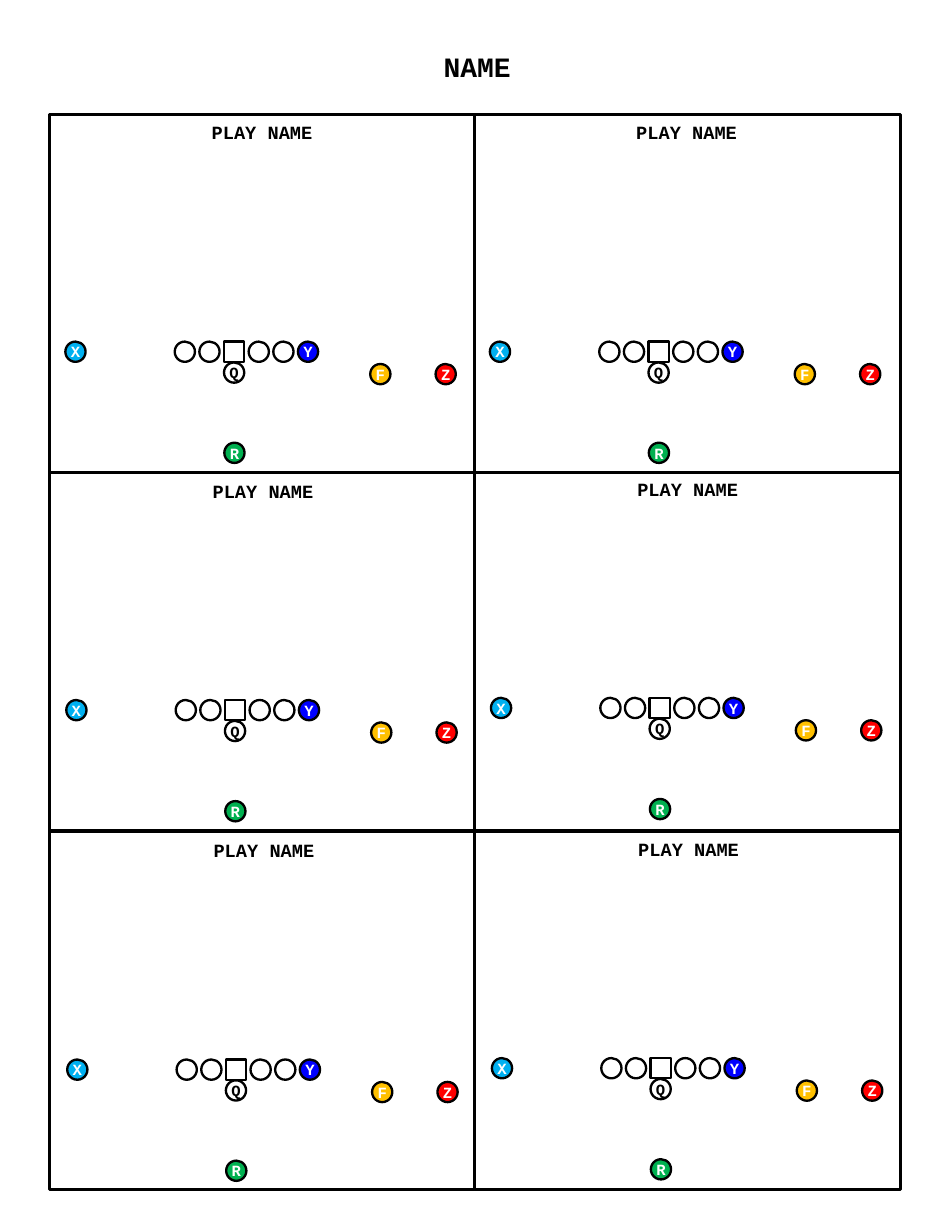
import pptx
import pptx.util
import pptx.dml.color
import pptx.enum.shapes
import pptx.enum.text

Pt = pptx.util.Pt
RGBColor = pptx.dml.color.RGBColor
SHAPE = pptx.enum.shapes.MSO_SHAPE
ANCHOR = pptx.enum.text.MSO_ANCHOR
ALIGN = pptx.enum.text.PP_ALIGN

BLACK = RGBColor(0x00, 0x00, 0x00)
WHITE = RGBColor(0xFF, 0xFF, 0xFF)
BLUE = RGBColor(0x00, 0x00, 0xFF)
AMBER = RGBColor(0xFF, 0xC0, 0x00)
GREEN = RGBColor(0x00, 0xB0, 0x50)
RED = RGBColor(0xFF, 0x00, 0x00)
SKY = RGBColor(0x00, 0xB0, 0xF0)

GRID_LEFT, GRID_TOP = 31.7, 73.5
CELL_W, CELL_H = 273.6, 230.4
COLUMNS, ROWS = 2, 3

MARKER = 13
LINE_STEP = 15.84
LINEMEN = (1, 2, -1, -2)  # places along the line, counted from the center

# Letter, offset from the center, fill, letter colour
PLAYERS = [
    ("Q", 0, 13.4, None, BLACK),
    ("Y", 3 * LINE_STEP, 0, BLUE, WHITE),
    ("F", 94, 14.4, AMBER, WHITE),
    ("R", 0.2, 65, GREEN, WHITE),
    ("Z", 136, 14.4, RED, WHITE),
    ("X", -102, 0, SKY, WHITE),
]

# Position of the center's square in each play
CENTERS = [
    (144, 219.6), (416.9, 219.6),
    (417.6, 448.6), (418.2, 680.2),
    (144.6, 450), (145.2, 681.1),
]


def write(tf, text, size=12, color=BLACK, anchor=ANCHOR.TOP, inset=None, wrap=True):
    tf.word_wrap = wrap
    tf.vertical_anchor = anchor
    if inset is not None:
        tf.margin_left = tf.margin_right = Pt(inset)
        tf.margin_top = tf.margin_bottom = Pt(inset)
    p = tf.paragraphs[0]
    p.alignment = ALIGN.CENTER
    r = p.add_run()
    r.text = text
    r.font.name = "Courier New"
    r.font.size = Pt(size)
    r.font.bold = True
    r.font.color.rgb = color


class PlaySheet:
    def __init__(self, slide):
        self.s = slide

    def title(self, text, x, y, w, h):
        sp = self.s.shapes.title
        sp.left, sp.top, sp.width, sp.height = Pt(x), Pt(y), Pt(w), Pt(h)
        write(sp.text_frame, text, size=18, anchor=ANCHOR.MIDDLE)

    def label(self, text, x, y, w, h):
        sp = self.s.shapes.add_textbox(Pt(x), Pt(y), Pt(w), Pt(h))
        write(sp.text_frame, text)

    def outline(self, kind, x, y, w, h, weight, fill=None):
        sp = self.s.shapes.add_shape(kind, Pt(x), Pt(y), Pt(w), Pt(h))
        sp.shadow.inherit = False
        if fill is None:
            sp.fill.background()
        else:
            sp.fill.solid()
            sp.fill.fore_color.rgb = fill
        sp.line.color.rgb = BLACK
        sp.line.width = Pt(weight)
        return sp

    def cell(self, x, y):
        self.outline(SHAPE.RECTANGLE, x, y, CELL_W, CELL_H, 2)

    def marker(self, x, y, kind=SHAPE.OVAL, letter=None, fill=None, color=BLACK):
        sp = self.outline(kind, x, y, MARKER, MARKER, 1.5, fill)
        if letter:
            write(sp.text_frame, letter, size=10, color=color,
                  anchor=ANCHOR.MIDDLE, inset=0, wrap=False)

    def play(self, x, y):
        """Draw one formation and its heading around the center at x, y."""
        self.marker(x, y, kind=SHAPE.RECTANGLE)
        for place in LINEMEN:
            self.marker(x + place * LINE_STEP, y)
        for letter, dx, dy, fill, color in PLAYERS:
            self.marker(x + dx, y + dy, letter=letter, fill=fill, color=color)
        self.label("PLAY NAME", x - 112.3, y - 145.2, CELL_W, 21.8)


def main():
    prs = pptx.Presentation()
    prs.slide_width, prs.slide_height = Pt(612), Pt(792)
    sheet = PlaySheet(prs.slides.add_slide(prs.slide_layouts[5]))

    sheet.title("NAME", 90.7, 28.1, 432, 29.1)
    for row in range(ROWS):
        for col in range(COLUMNS):
            sheet.cell(GRID_LEFT + col * CELL_W, GRID_TOP + row * CELL_H)
    for x, y in CENTERS:
        sheet.play(x, y)

    prs.save("out.pptx")


if __name__ == "__main__":
    main()
